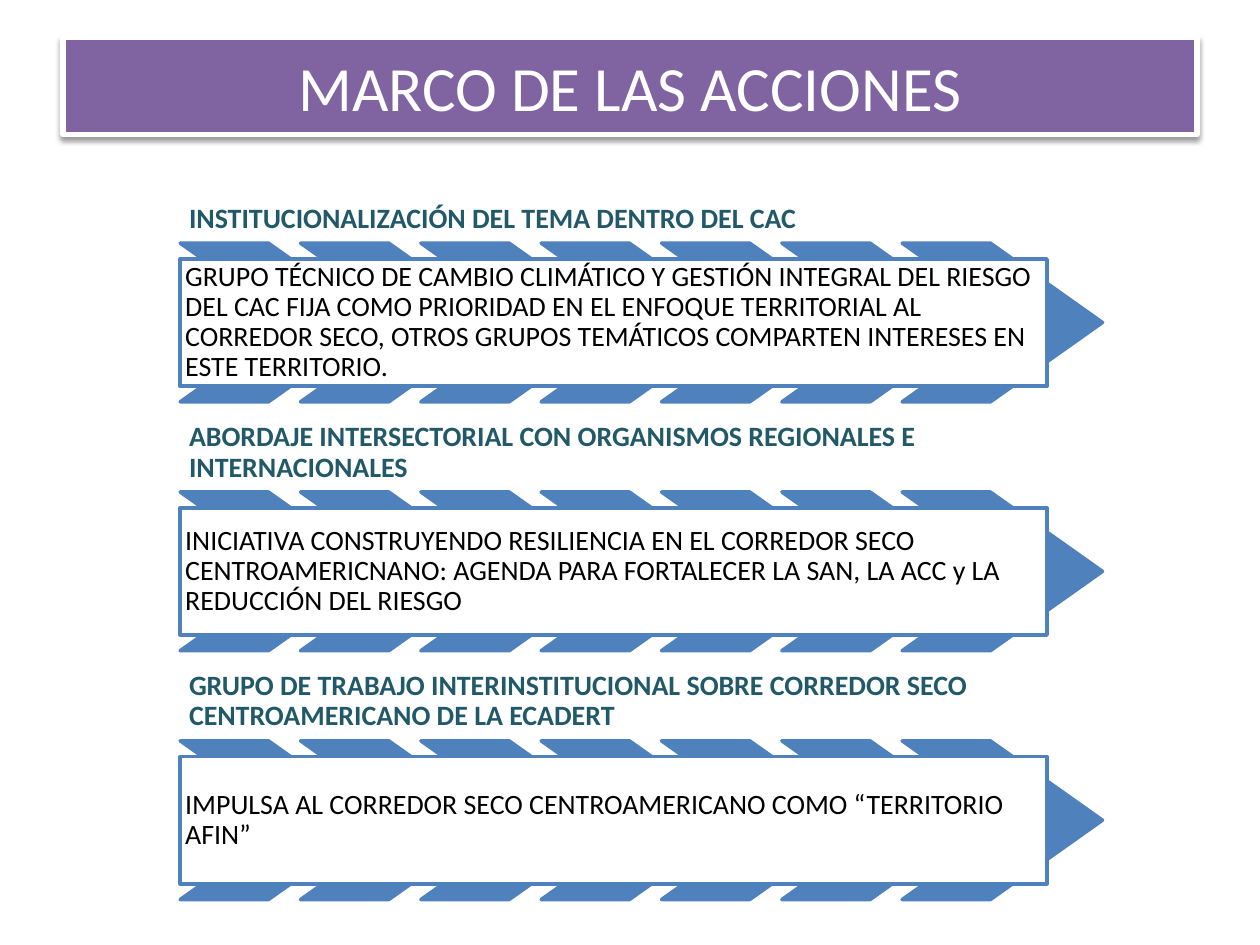
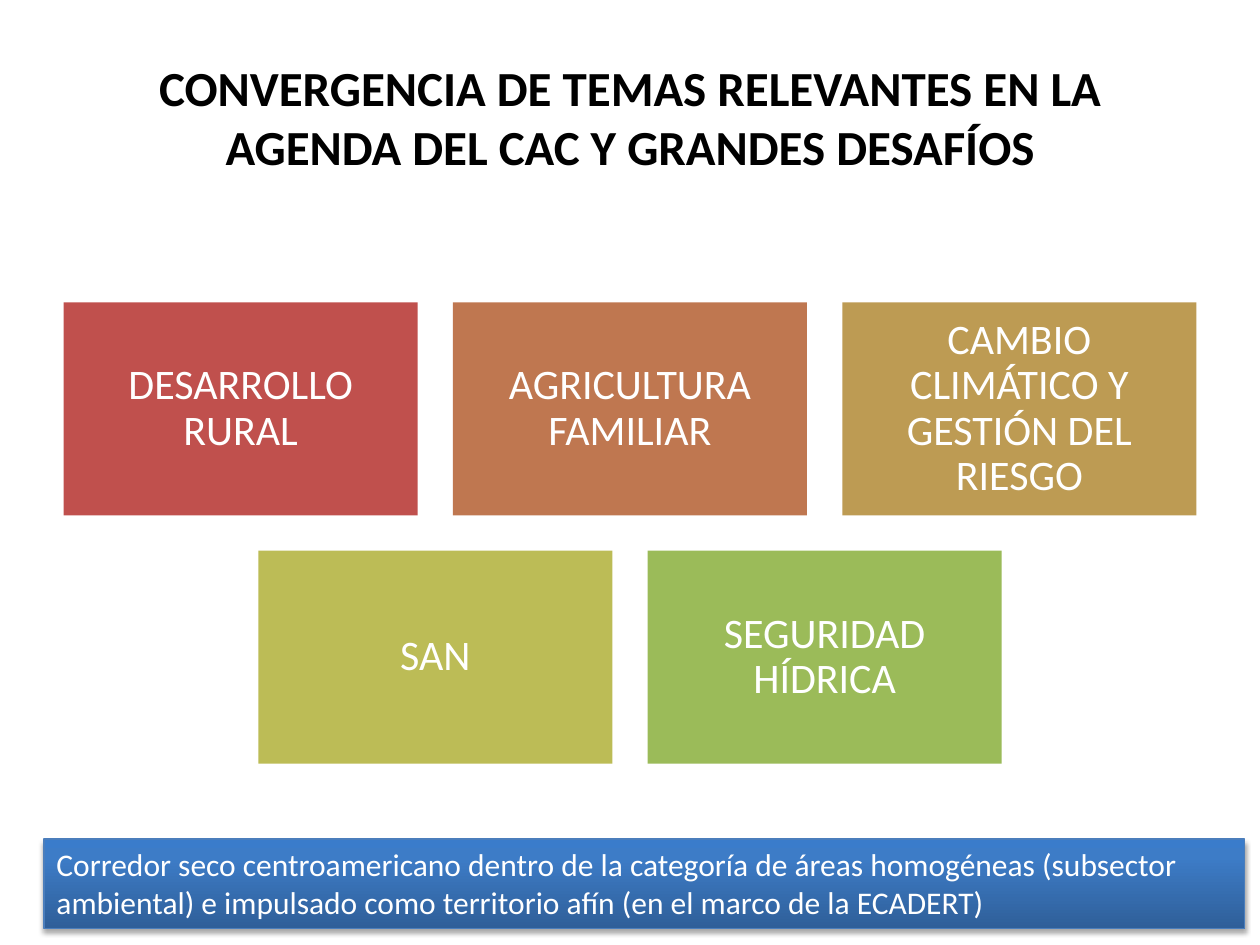
from lxml.etree import SubElement
from copy import deepcopy
from pptx import Presentation
from pptx.dml.color import RGBColor
from pptx.enum.shapes import MSO_SHAPE
from pptx.enum.text import MSO_ANCHOR, MSO_AUTO_SIZE, PP_ALIGN
from pptx.oxml.ns import qn
from pptx.util import Inches, Pt

FONT = "Calibri"
WHITE = RGBColor(0xFF, 0xFF, 0xFF)
BLACK = RGBColor(0, 0, 0)
PURPLE = RGBColor(0x80, 0x64, 0xA2)
BLUE = RGBColor(0x4F, 0x81, 0xBD)
TEAL = RGBColor(0x21, 0x59, 0x68)
EDGE = RGBColor(0x4B, 0x7E, 0xBC)
RED = RGBColor(0xC0, 0x50, 0x4D)
RUST = RGBColor(0xBF, 0x77, 0x50)
GOLD = RGBColor(0xBD, 0x9B, 0x53)
OLIVE = RGBColor(0xBC, 0xBC, 0x56)
GREEN = RGBColor(0x9B, 0xBB, 0x59)
NOTE_FADE = [(0, RGBColor(0x2F, 0x5F, 0x99)),
             (0.8, RGBColor(0x3D, 0x7C, 0xC7)),
             (1, RGBColor(0x3A, 0x7C, 0xCB))]

ACTIONS = [
    ("INSTITUCIONALIZACIÓN DEL TEMA DENTRO DEL CAC",
     "GRUPO TÉCNICO DE CAMBIO CLIMÁTICO Y GESTIÓN INTEGRAL DEL RIESGO DEL CAC "
     "FIJA COMO PRIORIDAD EN EL ENFOQUE TERRITORIAL AL CORREDOR SECO, OTROS "
     "GRUPOS TEMÁTICOS COMPARTEN INTERESES EN ESTE TERRITORIO."),
    ("ABORDAJE INTERSECTORIAL CON ORGANISMOS REGIONALES E INTERNACIONALES",
     "INICIATIVA CONSTRUYENDO RESILIENCIA EN EL CORREDOR SECO "
     "CENTROAMERICNANO: AGENDA PARA FORTALECER LA SAN, LA ACC y LA "
     "REDUCCIÓN DEL RIESGO"),
    ("GRUPO DE TRABAJO INTERINSTITUCIONAL SOBRE CORREDOR SECO "
     "CENTROAMERICANO DE LA ECADERT",
     "IMPULSA AL CORREDOR SECO CENTROAMERICANO COMO “TERRITORIO AFIN”"),
]
TOPICS = [
    [("DESARROLLO RURAL", RED), ("AGRICULTURA FAMILIAR", RUST),
     ("CAMBIO CLIMÁTICO Y GESTIÓN DEL RIESGO", GOLD)],
    [("SAN", OLIVE), ("SEGURIDAD HÍDRICA", GREEN)],
]


def write(shape, text, size=16, color=BLACK, bold=False, align=PP_ALIGN.LEFT,
          anchor=MSO_ANCHOR.MIDDLE, space=None, inset=None,
          fit=MSO_AUTO_SIZE.NONE):
    frame = shape.text_frame
    frame.word_wrap = True
    frame.auto_size = fit
    frame.vertical_anchor = anchor
    if inset is not None:
        frame.margin_left = frame.margin_right = Inches(inset)
        frame.margin_top = frame.margin_bottom = Inches(inset)
    para = frame.paragraphs[0]
    para.alignment = align
    para.line_spacing = space
    run = para.add_run()
    run.text = text
    font = run.font
    font.name, font.size, font.bold = FONT, Pt(size), bold
    font.color.rgb = color


def paint(shape, fill, line=None, width=0):
    shape.shadow.inherit = False
    if fill is not None:
        shape.fill.solid()
        shape.fill.fore_color.rgb = fill
    if line is None:
        shape.line.fill.background()
    else:
        shape.line.color.rgb = line
        shape.line.width = Pt(width)


def shade(shape, alpha, dist):
    """Drop a soft black shadow straight below the shape."""
    effects = shape._element.spPr.find(qn("a:effectLst"))
    outer = SubElement(effects, qn("a:outerShdw"), blurRad=str(Pt(3.1)),
                       dist=str(Pt(dist)), dir="5400000", rotWithShape="0")
    black = SubElement(outer, qn("a:srgbClr"), val="000000")
    SubElement(black, qn("a:alpha"), val=str(alpha * 1000))


def fade(shape, stops):
    """Fill with a gradient that runs from bottom to top."""
    fill = shape.fill
    fill.gradient()
    fill.gradient_angle = 90
    marks = shape._element.spPr.find(qn("a:gradFill")).find(qn("a:gsLst"))
    while len(marks) < len(stops):
        marks.append(deepcopy(marks[0]))
    for mark, (place, color) in zip(fill.gradient_stops, stops):
        mark.position = place
        mark.color.rgb = color


class Deck:
    def __init__(self):
        self.file = Presentation()
        self.file.slide_width, self.file.slide_height = Inches(10), Inches(7.5)
        self.slide = None

    def title(self, text, height, **style):
        """Start a slide and set its title."""
        self.slide = self.file.slides.add_slide(self.file.slide_layouts[5])
        shape = self.slide.shapes.title
        shape.left, shape.top = Inches(0.5), Inches(0.3)
        shape.width, shape.height = Inches(9), Inches(height)
        write(shape, text, align=PP_ALIGN.CENTER, **style)
        return shape

    def box(self, x, y, w, h, fill, line=None, width=0, kind=MSO_SHAPE.RECTANGLE):
        shape = self.slide.shapes.add_shape(
            kind, Inches(x), Inches(y), Inches(w), Inches(h))
        paint(shape, fill, line, width)
        return shape

    def label(self, text, x, y, w, h, **style):
        area = self.slide.shapes.add_textbox(
            Inches(x), Inches(y), Inches(w), Inches(h))
        write(area, text, **style)

    def action(self, head, body, y):
        """Heading, then a framed text over a row of seven chevrons."""
        left = 1.43
        self.label(head, left, y, 6.79, 0.62, color=TEAL, bold=True,
                   anchor=MSO_ANCHOR.BOTTOM, space=0.9, inset=0.07)
        for i in range(7):
            arrow = self.box(left + i * 0.955, y + 0.62, 1.59, 1.26, BLUE,
                             BLUE, 2, MSO_SHAPE.CHEVRON)
            arrow.adjustments[0] = 0.706
        frame = self.box(left, y + 0.745, 6.88, 1.01, WHITE, BLUE, 2)
        write(frame, body, space=0.9, inset=0.04)

    def topics(self, rows, y):
        """Rows of equal tiles, each row centred on the slide."""
        w, h, gap = 2.81, 1.69, 0.28
        for r, row in enumerate(rows):
            left = (10 - len(row) * w - (len(row) - 1) * gap) / 2
            for c, (text, color) in enumerate(row):
                tile = self.box(left + c * (w + gap), y + r * (h + gap),
                                w, h, color)
                write(tile, text, size=24, color=WHITE, space=0.9,
                      align=PP_ALIGN.CENTER, inset=0.1)

    def note(self, text):
        strip = self.box(0.35, 6.66, 9.53, 0.71, None, EDGE, 0.75)
        fade(strip, NOTE_FADE)
        shade(strip, 35, 1.8)
        write(strip, text, size=18, color=WHITE, anchor=MSO_ANCHOR.TOP,
              fit=MSO_AUTO_SIZE.SHAPE_TO_FIT_TEXT)


def main():
    deck = Deck()
    band = deck.title("MARCO DE LAS ACCIONES", 0.77, size=36, color=WHITE)
    paint(band, PURPLE, WHITE, 3)
    shade(band, 38, 1.6)
    for i, (head, body) in enumerate(ACTIONS):
        deck.action(head, body, 1.31 + i * 1.975)

    deck.title("CONVERGENCIA DE TEMAS RELEVANTES EN LA AGENDA DEL CAC Y "
               "GRANDES DESAFÍOS", 1.25, size=28, bold=True)
    deck.topics(TOPICS, 2.4)
    deck.note("Corredor seco centroamericano dentro de la categoría de áreas "
              "homogéneas (subsector ambiental) e impulsado como territorio "
              "afín (en el marco de la ECADERT)")
    deck.file.save("out.pptx")


if __name__ == "__main__":
    main()
